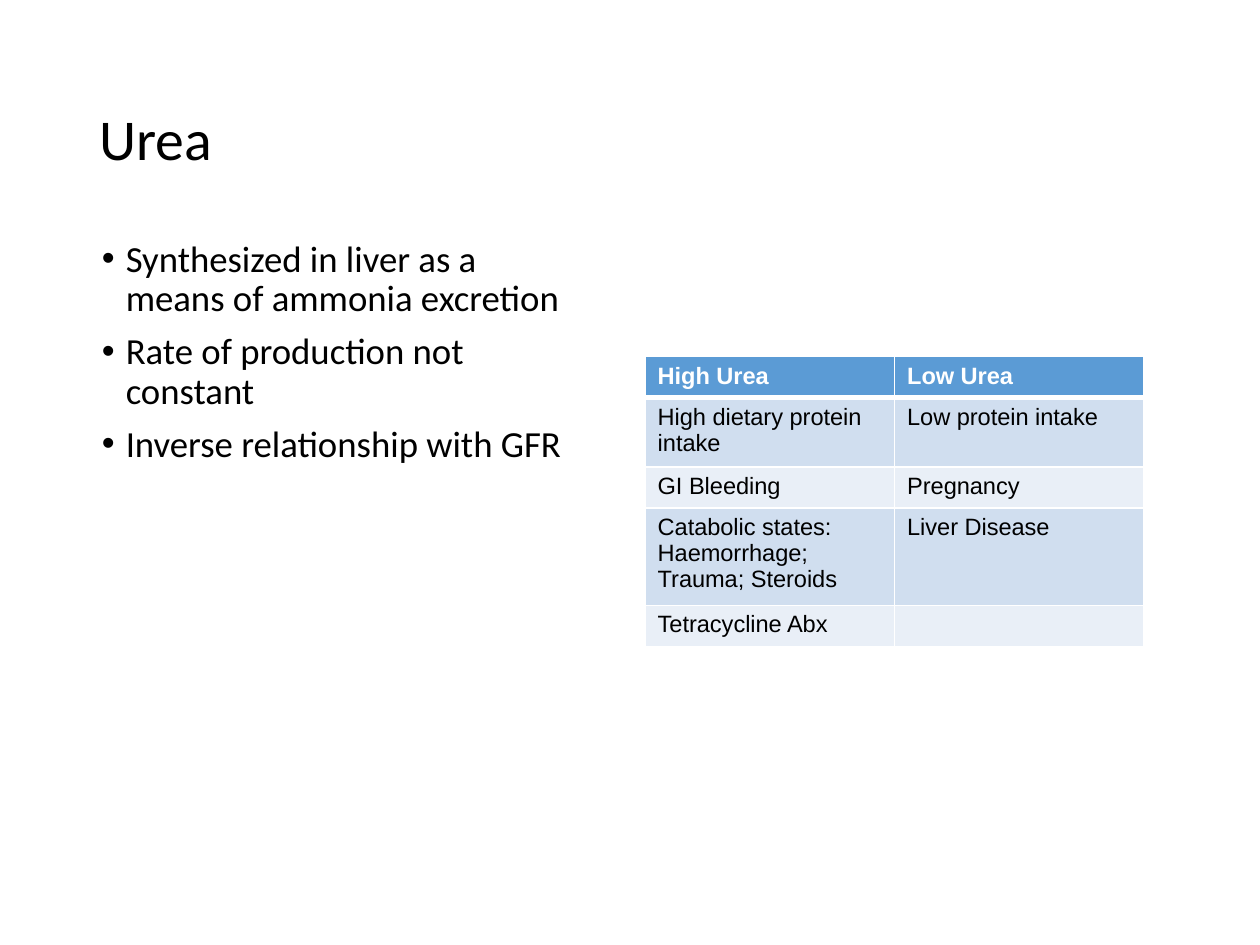
import dataclasses

import lxml.etree
import pptx
import pptx.dml.color
import pptx.enum.text
import pptx.oxml
import pptx.oxml.ns
import pptx.util

Inches = pptx.util.Inches
Pt = pptx.util.Pt
qn = pptx.oxml.ns.qn


@dataclasses.dataclass(frozen=True)
class Theme:
    ink: str = "000000"
    white: str = "FFFFFF"
    head: str = "5B9BD5"
    bands: tuple = ("D0DEEF", "E9EFF7")
    font: str = "Calibri"
    grid_font: str = "Arial"
    title: float = 33
    body: float = 21
    grid: float = 13.5
    thin: float = 1
    thick: float = 3


THEME = Theme()
POINTS = [
    "Synthesized in liver as a means of ammonia excretion",
    "Rate of production not constant",
    "Inverse relationship with GFR",
]
ROWS = [
    ("High Urea", "Low Urea"),
    ("High dietary protein intake", "Low protein intake"),
    ("GI Bleeding", "Pregnancy"),
    ("Catabolic states:\nHaemorrhage; Trauma; Steroids", "Liver Disease"),
    ("Tetracycline Abx", ""),
]
HEIGHTS = [0.28, 0.47, 0.28, 0.67, 0.28]


def color(code):
    return pptx.dml.color.RGBColor.from_string(code)


def style(para, font, size, code, bold=False):
    for run in para.runs:
        run.font.name = font
        run.font.size = Pt(size)
        run.font.color.rgb = color(code)
        run.font.bold = bold


def add_text(slide, box, text, size):
    shape = slide.shapes.add_textbox(*map(Inches, box))
    frame = shape.text_frame
    frame.word_wrap = True
    frame.text = text
    for para in frame.paragraphs:
        para.line_spacing = 0.9
        style(para, THEME.font, size, THEME.ink)
    return frame


def add_bullet(para):
    props = para._p.get_or_add_pPr()
    props.set("marL", str(Inches(0.19)))
    props.set("indent", str(-Inches(0.19)))
    face = lxml.etree.SubElement(props, qn("a:buFont"))
    face.set("typeface", "Arial")
    mark = lxml.etree.SubElement(props, qn("a:buChar"))
    mark.set("char", "•")


def add_list(slide, box, points):
    frame = add_text(slide, box, "\n".join(points), THEME.body)
    for num, para in enumerate(frame.paragraphs):
        add_bullet(para)
        if num:
            para.space_before = Pt(7.5)


def set_edges(cell, top, bottom):
    props = cell._tc.get_or_add_tcPr()
    widths = {"L": THEME.thin, "R": THEME.thin, "T": top, "B": bottom}
    for num, (side, width) in enumerate(widths.items()):
        line = lxml.etree.Element(qn("a:ln" + side), w=str(Pt(width)))
        fill = lxml.etree.SubElement(line, qn("a:solidFill"))
        lxml.etree.SubElement(fill, qn("a:srgbClr"), val=THEME.white)
        props.insert(num, line)


def fill_cell(cell, text, row):
    head = row == 0
    cell.fill.solid()
    cell.fill.fore_color.rgb = color(THEME.head if head else THEME.bands[(row - 1) % 2])
    set_edges(cell, THEME.thick if row == 1 else THEME.thin,
              THEME.thick if head else THEME.thin)
    cell.text_frame.text = text
    for para in cell.text_frame.paragraphs:
        style(para, THEME.grid_font, THEME.grid, THEME.white if head else THEME.ink, head)
        if not text:
            end = lxml.etree.SubElement(para._p, qn("a:endParaRPr"))
            end.set("sz", str(int(THEME.grid * 100)))


def add_grid(slide, left, top, width, rows, heights):
    shape = slide.shapes.add_table(
        len(rows), len(rows[0]), Inches(left), Inches(top),
        Inches(width), Inches(sum(heights)))
    table = shape.table
    for row, (texts, height) in enumerate(zip(rows, heights)):
        table.rows[row].height = Inches(height)
        for col, text in enumerate(texts):
            fill_cell(table.cell(row, col), text, row)


def main():
    deck = pptx.Presentation()
    deck.slide_width = Inches(10)
    deck.slide_height = Inches(7.5)
    slide = deck.slides.add_slide(deck.slide_layouts[6])
    title = add_text(slide, (0.69, 0.4, 8.62, 1.45), "Urea", THEME.title)
    title.vertical_anchor = pptx.enum.text.MSO_ANCHOR.MIDDLE
    add_list(slide, (0.71, 1.86, 4, 3.87), POINTS)
    add_grid(slide, 5.12, 2.83, 3.96, ROWS, HEIGHTS)
    deck.save("out.pptx")


if __name__ == "__main__":
    main()
